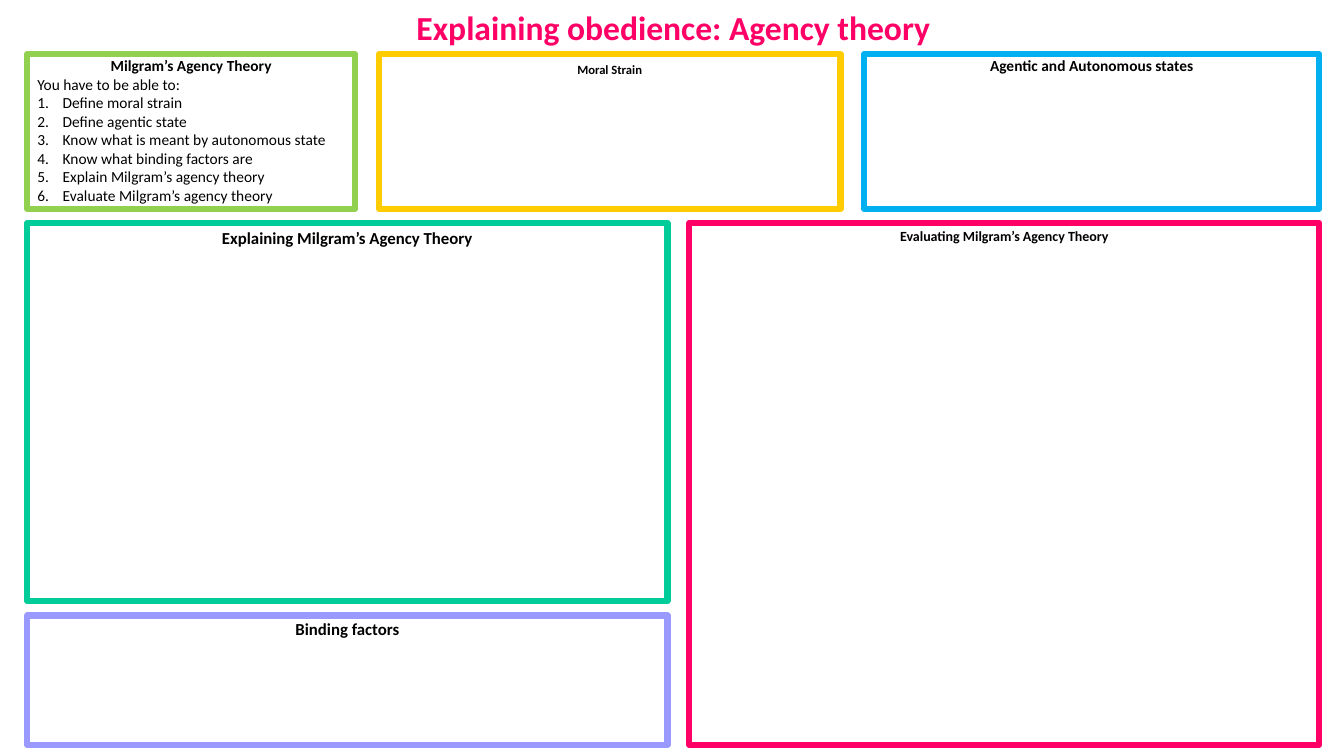
from dataclasses import dataclass

from lxml import etree
from pptx import Presentation
from pptx.dml.color import RGBColor
from pptx.enum.shapes import MSO_SHAPE
from pptx.enum.text import MSO_ANCHOR, PP_ALIGN
from pptx.oxml.ns import qn
from pptx.util import Cm, Pt

RECTANGLE = MSO_SHAPE.RECTANGLE
TOP = MSO_ANCHOR.TOP
LEFT, CENTER = PP_ALIGN.LEFT, PP_ALIGN.CENTER


@dataclass(frozen=True)
class Theme:
    font: str = "Calibri"
    white: str = "FFFFFF"
    black: str = "000000"
    pink: str = "FF0066"
    green: str = "92D050"
    yellow: str = "FFCC00"
    blue: str = "00B0F0"
    teal: str = "00CC99"
    lilac: str = "9999FF"
    title: int = 24
    large: int = 12
    body: int = 11
    small: int = 10
    tiny: int = 9
    border: float = 4.5


def write(frame, text, *, font, size, color, bold=False, align=LEFT, numbered=False):
    para = frame.paragraphs[0]
    if para.runs:
        para = frame.add_paragraph()
    para.alignment = align
    span = para.add_run()
    span.text = text
    span.font.name = font
    span.font.size = Pt(size)
    span.font.bold = bold
    span.font.color.rgb = RGBColor.from_string(color)
    if numbered:
        properties = para._p.get_or_add_pPr()
        properties.set("marL", str(Cm(0.64)))
        properties.set("indent", str(-Cm(0.64)))
        etree.SubElement(properties, qn("a:buFont"), typeface="+mj-lt")
        etree.SubElement(properties, qn("a:buAutoNum"), type="arabicPeriod")


class Worksheet:
    def __init__(self, page, theme):
        self.page = page
        self.theme = theme

    def prepare(self, frame, inset):
        frame.word_wrap = True
        frame.vertical_anchor = TOP
        frame.margin_top = Cm(inset)
        frame.margin_bottom = 0

    def title(self, text, left, top, width, height):
        box = self.page.shapes.add_textbox(Cm(left), Cm(top), Cm(width), Cm(height))
        self.prepare(box.text_frame, 0.13)
        write(box.text_frame, text, font=self.theme.font, size=self.theme.title,
              color=self.theme.pink, bold=True, align=CENTER)

    def panel(self, heading, left, top, width, height, color, size, inset):
        box = self.page.shapes.add_shape(RECTANGLE, Cm(left), Cm(top), Cm(width), Cm(height))
        box.shadow.inherit = False
        box.fill.solid()
        box.fill.fore_color.rgb = RGBColor.from_string(self.theme.white)
        box.line.color.rgb = RGBColor.from_string(color)
        box.line.width = Pt(self.theme.border)
        self.prepare(box.text_frame, inset)
        write(box.text_frame, heading, font=self.theme.font, size=size,
              color=self.theme.black, bold=True, align=CENTER)
        return box.text_frame

    def goals(self, frame, intro, items):
        body = dict(font=self.theme.font, size=self.theme.body, color=self.theme.black)
        write(frame, intro, **body)
        for item in items:
            write(frame, item, numbered=True, **body)


def main():
    deck = Presentation()
    deck.slide_width, deck.slide_height = Cm(33.87), Cm(19.05)
    theme = Theme()
    sheet = Worksheet(deck.slides.add_slide(deck.slide_layouts[6]), theme)

    left, right, bottom = 0.69, 33.25, 18.77
    column_gap, row_gap = 0.6, 0.36
    upper_top, upper_height = 1.37, 3.89
    lower_top = upper_top + upper_height + row_gap
    half_width, theory_height = 16.13, 9.53
    binding_top = lower_top + theory_height + row_gap
    evaluation_left = 17.37

    goals_width, strain_width = 8.26, 11.63
    strain_left = left + goals_width + column_gap
    states_left = strain_left + strain_width + column_gap

    goals = sheet.panel("Milgram’s Agency Theory", left, upper_top, goals_width,
                        upper_height, theme.green, theme.body, 0.05)
    sheet.goals(goals, "You have to be able to:", [
        "Define moral strain",
        "Define agentic state",
        "Know what is meant by autonomous state",
        "Know what binding factors are",
        "Explain Milgram’s agency theory",
        "Evaluate Milgram’s agency theory",
    ])
    sheet.panel("Explaining Milgram’s Agency Theory", left, lower_top, half_width,
                theory_height, theme.teal, theme.large, 0.12)
    sheet.panel("Evaluating Milgram’s Agency Theory", evaluation_left, lower_top,
                right - evaluation_left, bottom - lower_top, theme.pink, theme.small, 0.12)
    sheet.panel("Binding factors", left, binding_top, half_width,
                bottom - binding_top, theme.lilac, theme.large, 0.08)
    sheet.panel("Moral Strain", strain_left, upper_top, strain_width,
                upper_height, theme.yellow, theme.tiny, 0.2)
    sheet.panel("Agentic and Autonomous states", states_left, upper_top,
                right - states_left, upper_height, theme.blue, theme.body, 0.05)
    sheet.title("Explaining obedience: Agency theory", left, 0.05, right - left, 1.27)
    deck.save("out.pptx")


if __name__ == "__main__":
    main()
